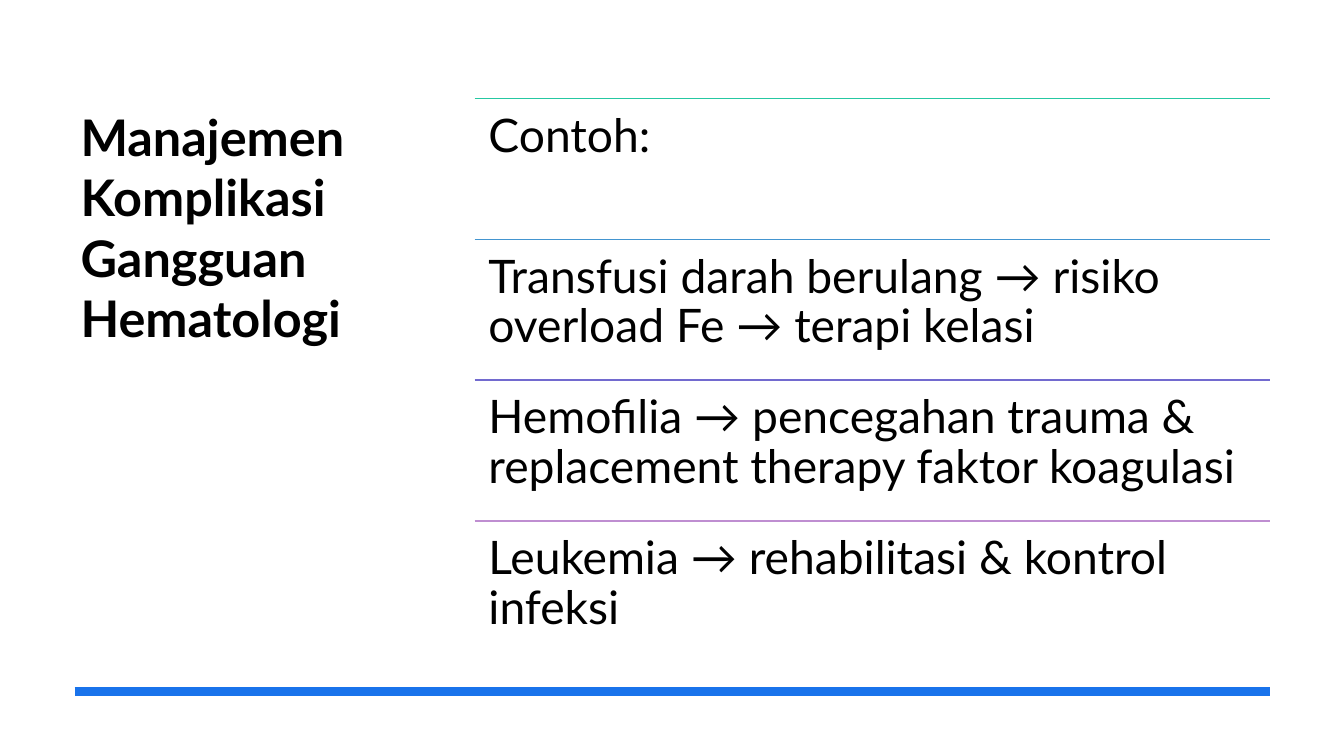
from lxml import etree
from pptx import Presentation
from pptx.dml.color import RGBColor
from pptx.enum.shapes import MSO_CONNECTOR
from pptx.enum.text import MSO_ANCHOR
from pptx.oxml.ns import qn
from pptx.util import Cm, Pt

STRAIGHT = MSO_CONNECTOR.STRAIGHT
TOP = MSO_ANCHOR.TOP
FONT = "Lato"
BLACK = "000000"
RIGHT = 32.0
LIST_LEFT = 11.96
LIST_TOP = 2.48
ROW_HEIGHT = 3.55
ROWS = [
    ("Contoh:", "25C8A2"),
    ("Transfusi darah berulang → risiko overload Fe → terapi kelasi", "4395D0"),
    ("Hemofilia → pencegahan trauma & replacement therapy faktor koagulasi", "726ACF"),
    ("Leukemia → rehabilitasi & kontrol infeksi", "BF8ED1"),
]


def rgb(value):
    """Return the colour for a hex string."""
    return RGBColor.from_string(value)


def add_rule(s, left, y, color, weight):
    """Draw a horizontal line from left to the right margin."""
    line = s.shapes.add_connector(STRAIGHT, Cm(left), Cm(y), Cm(RIGHT), Cm(y))
    line.line.color.rgb = rgb(color)
    line.line.width = Pt(weight)
    etree.SubElement(line._element.spPr, qn("a:effectLst"))


def add_text(s, text, box, size, insets, bold=False, spacing=1.0):
    """Add a wrapped, top-aligned text box with one paragraph."""
    sp = s.shapes.add_textbox(*map(Cm, box))
    tf = sp.text_frame
    tf.word_wrap = True
    tf.vertical_anchor = TOP
    tf.margin_left = tf.margin_right = Cm(insets[0])
    tf.margin_top = tf.margin_bottom = Cm(insets[1])
    tf.text = text
    p = tf.paragraphs[0]
    p.line_spacing = spacing
    font = p.runs[0].font
    font.name = FONT
    font.size = Pt(size)
    font.bold = bold
    font.color.rgb = rgb(BLACK)


def add_row(s, index, text, color):
    """Add one list entry under its coloured rule."""
    top = LIST_TOP + index * ROW_HEIGHT
    add_rule(s, LIST_LEFT, top, color, 1)
    box = (LIST_LEFT, top, RIGHT - LIST_LEFT, ROW_HEIGHT)
    add_text(s, text, box, 33, (0.35, 0.35), spacing=0.9)


def main():
    """Build and save the slide."""
    prs = Presentation()
    prs.slide_width, prs.slide_height = Cm(33.87), Cm(19.05)
    s = prs.slides.add_slide(prs.slide_layouts[6])
    add_text(s, "Manajemen Komplikasi Gangguan Hematologi",
             (1.78, 2.54, 8.33, 11.56), 36, (0.25, 0.13), bold=True)
    add_rule(s, 1.88, 17.42, "1973EB", 6)
    for index, (text, color) in enumerate(ROWS):
        add_row(s, index, text, color)
    prs.save("out.pptx")


if __name__ == "__main__":
    main()
